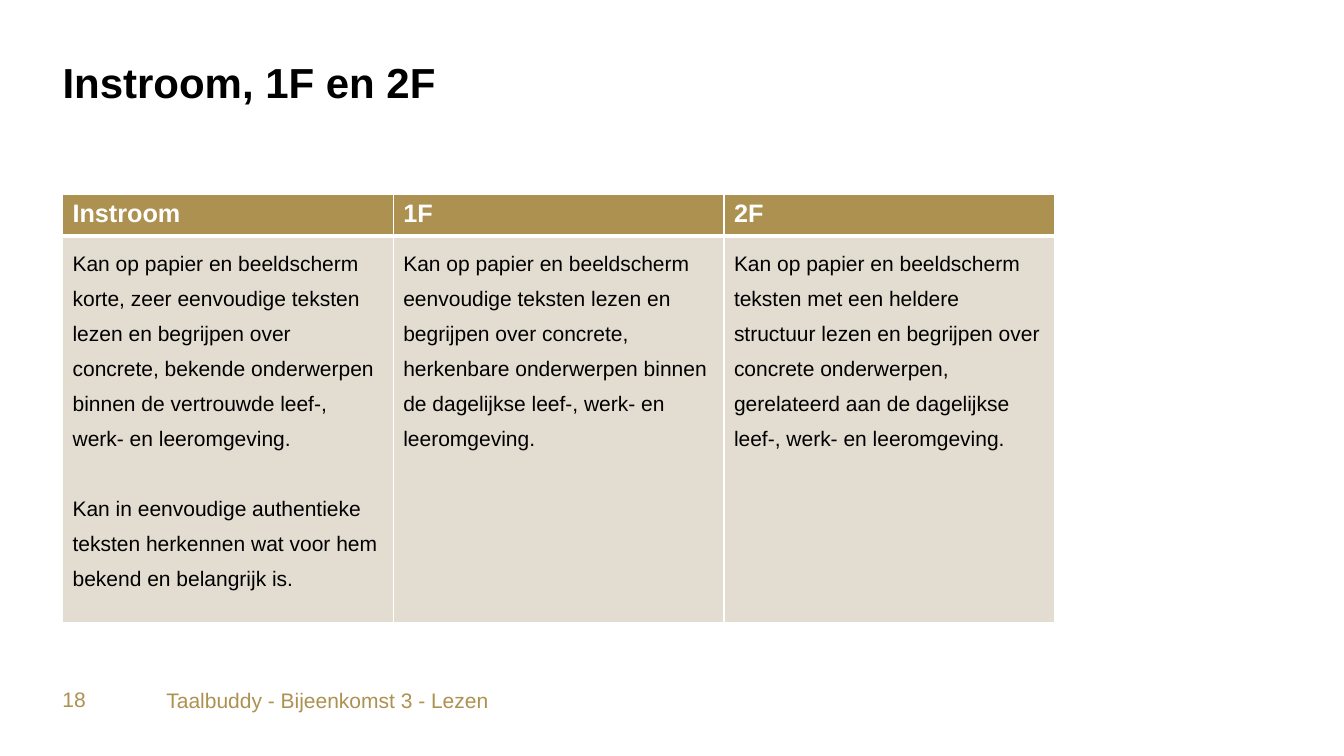
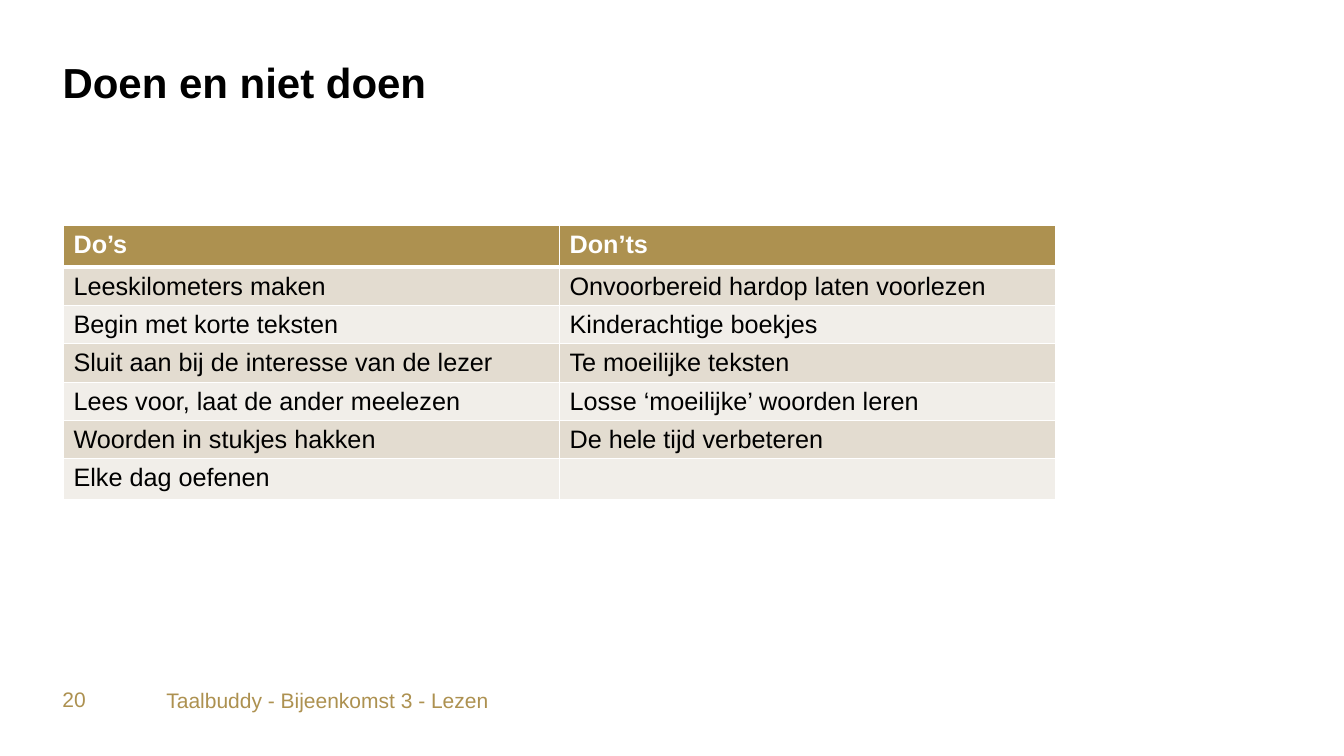
"""Build two slides on reading levels and reading tips for language buddies."""
from dataclasses import dataclass

from lxml import etree
from pptx import Presentation
from pptx.dml.color import RGBColor
from pptx.enum.text import MSO_ANCHOR, MSO_AUTO_SIZE, PP_ALIGN
from pptx.oxml.ns import qn
from pptx.util import Inches, Pt

TOP = MSO_ANCHOR.TOP
NO_AUTOFIT = MSO_AUTO_SIZE.NONE
LEFT = PP_ALIGN.LEFT


@dataclass(frozen=True)
class Theme:
    font: str = "Arial"
    gold: str = "AD9150"
    sand: str = "E3DCD0"
    light_sand: str = "F1EEE9"
    black: str = "000000"
    white: str = "FFFFFF"
    title_size: int = 30
    table_size: int = 18
    small_size: int = 15
    thin_border: int = 1
    header_border: int = 3


THEME = Theme()
MARGIN = 0.62
TABLE_WIDTH = 9.84
HEADER_HEIGHT = 0.41
FOOTER = "Taalbuddy - Bijeenkomst 3 - Lezen"

SLIDES = [
    {
        "title": "Instroom, 1F en 2F",
        "number": "18",
        "left": 0.62,
        "top": 1.93,
        "row_height": 3.84,
        "size": THEME.small_size,
        "line_spacing": 1.5,
        "rows": [
            ["Instroom", "1F", "2F"],
            [
                "Kan op papier en beeldscherm korte, zeer eenvoudige teksten lezen en "
                "begrijpen over concrete, bekende onderwerpen binnen de vertrouwde "
                "leef-, werk- en leeromgeving.\n"
                "Kan in eenvoudige authentieke teksten herkennen wat voor hem bekend "
                "en belangrijk is.",
                "Kan op papier en beeldscherm eenvoudige teksten lezen en begrijpen over "
                "concrete, herkenbare onderwerpen binnen de dagelijkse leef-, werk- en "
                "leeromgeving.",
                "Kan op papier en beeldscherm teksten met een heldere structuur lezen en "
                "begrijpen over concrete onderwerpen, gerelateerd aan de dagelijkse "
                "leef-, werk- en leeromgeving.",
            ],
        ],
    },
    {
        "title": "Doen en niet doen",
        "number": "20",
        "left": 0.63,
        "top": 2.24,
        "row_height": 0.38,
        "size": THEME.table_size,
        "line_spacing": 1.0,
        "rows": [
            ["Do’s", "Don’ts"],
            ["Leeskilometers maken", "Onvoorbereid hardop laten voorlezen"],
            ["Begin met korte teksten", "Kinderachtige boekjes"],
            ["Sluit aan bij de interesse van de lezer", "Te moeilijke teksten"],
            ["Lees voor, laat de ander meelezen", "Losse ‘moeilijke’ woorden leren"],
            ["Woorden in stukjes hakken", "De hele tijd verbeteren"],
            ["Elke dag oefenen", ""],
        ],
    },
]


def write_text(text_frame, text, size, color, bold=False, line_spacing=1.0):
    text_frame.text = text
    for index, paragraph in enumerate(text_frame.paragraphs):
        paragraph.alignment = LEFT
        paragraph.line_spacing = line_spacing
        if index:
            paragraph.space_before = Pt(25)
        for run in paragraph.runs:
            run.font.name = THEME.font
            run.font.size = Pt(size)
            run.font.bold = bold
            run.font.color.rgb = RGBColor.from_string(color)


def set_borders(cell, top, bottom):
    properties = cell._tc.get_or_add_tcPr()
    widths = {"L": THEME.thin_border, "R": THEME.thin_border, "T": top, "B": bottom}
    for side, width in widths.items():
        line = etree.SubElement(properties, qn(f"a:ln{side}"), w=str(Pt(width)))
        fill = etree.SubElement(line, qn("a:solidFill"))
        etree.SubElement(fill, qn("a:srgbClr"), val=THEME.white)


presentation = Presentation()
presentation.slide_width = Inches(13.33)
presentation.slide_height = Inches(7.5)

layout = presentation.slide_layouts[5]
layout_title = layout.placeholders[0]
layout_title.left, layout_title.top = Inches(MARGIN), Inches(0.62)
layout_title.width, layout_title.height = Inches(12.06), Inches(1.31)

for content in SLIDES:
    slide = presentation.slides.add_slide(layout)

    footer = slide.shapes.add_textbox(Inches(1.65), Inches(6.82), Inches(10.78), Inches(0.34))
    number = slide.shapes.add_textbox(Inches(MARGIN), Inches(6.81), Inches(0.84), Inches(0.33))
    texts = [
        (slide.shapes.title, content["title"], THEME.title_size, THEME.black, True, 0.9),
        (footer, FOOTER, THEME.small_size, THEME.gold, False, 1.0),
        (number, content["number"], THEME.small_size, THEME.gold, False, 1.0),
    ]
    for shape, text, size, color, bold, line_spacing in texts:
        text_frame = shape.text_frame
        text_frame.margin_left = text_frame.margin_right = 0
        text_frame.margin_top = text_frame.margin_bottom = 0
        text_frame.word_wrap = True
        text_frame.auto_size = NO_AUTOFIT
        text_frame.vertical_anchor = TOP
        write_text(text_frame, text, size, color, bold, line_spacing)

    rows = content["rows"]
    column_count = len(rows[0])
    table_height = HEADER_HEIGHT + content["row_height"] * (len(rows) - 1)
    table = slide.shapes.add_table(
        len(rows), column_count, Inches(content["left"]), Inches(content["top"]),
        Inches(TABLE_WIDTH), Inches(table_height)).table
    for column in table.columns:
        column.width = Inches(TABLE_WIDTH / column_count)

    for row_index, row in enumerate(rows):
        is_header = row_index == 0
        table.rows[row_index].height = Inches(HEADER_HEIGHT if is_header else content["row_height"])
        band = THEME.sand if row_index % 2 else THEME.light_sand
        top = THEME.header_border if row_index == 1 else THEME.thin_border
        bottom = THEME.header_border if is_header else THEME.thin_border
        for column_index, text in enumerate(row):
            cell = table.cell(row_index, column_index)
            set_borders(cell, top, bottom)
            cell.fill.solid()
            cell.fill.fore_color.rgb = RGBColor.from_string(THEME.gold if is_header else band)
            if is_header:
                write_text(cell.text_frame, text, THEME.table_size, THEME.white, True)
            elif text:
                write_text(cell.text_frame, text, content["size"], THEME.black,
                           line_spacing=content["line_spacing"])

presentation.save("out.pptx")
